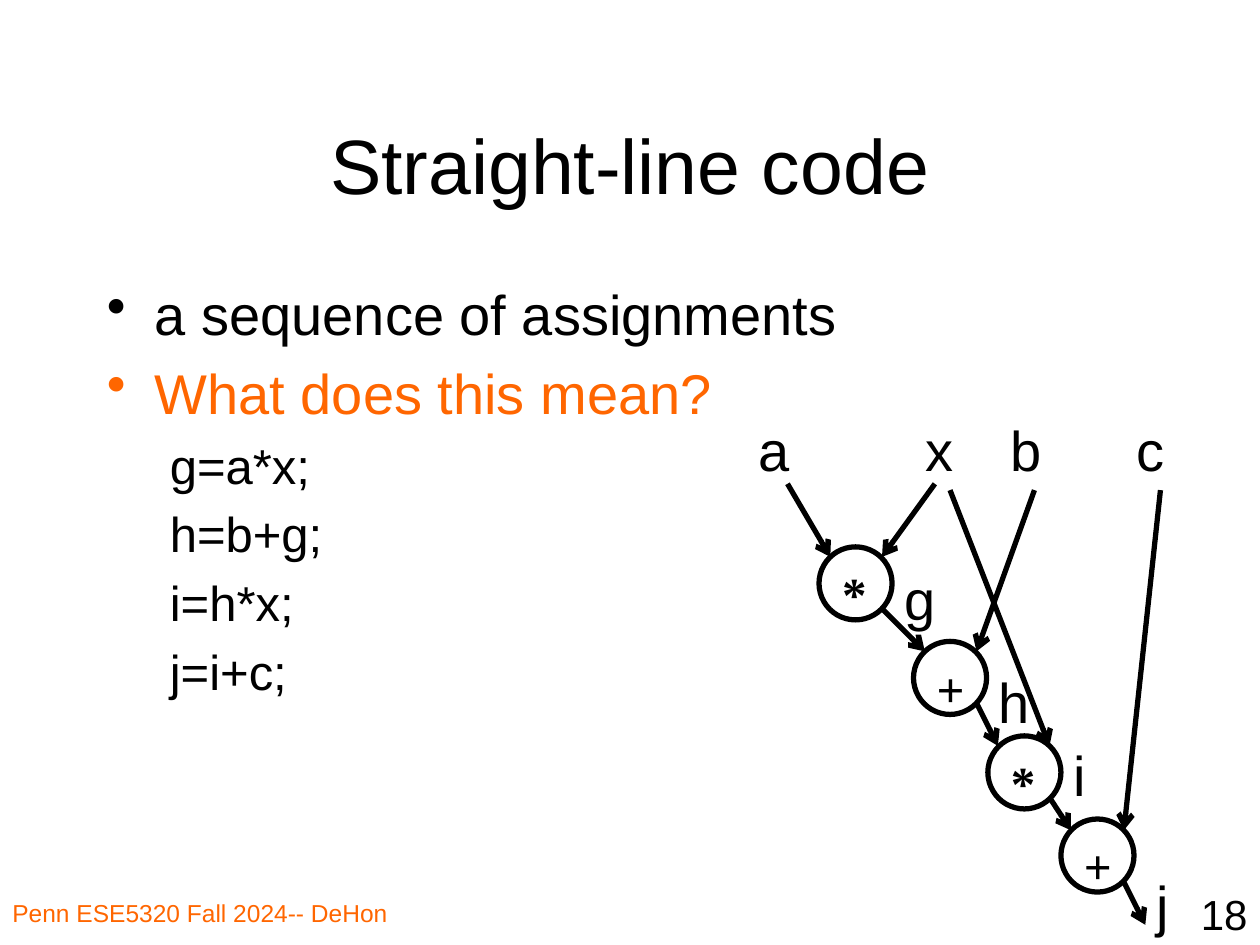
from lxml import etree
from pptx import Presentation
from pptx.dml.color import RGBColor
from pptx.enum import shapes, text
from pptx.oxml import ns
from pptx.util import Inches, Pt

BLACK = RGBColor(0x00, 0x00, 0x00)
ORANGE = RGBColor(0xFF, 0x66, 0x00)
NODE_SIZE = 0.58
LABEL_SIZE = (0.58, 0.64)


def add_run(paragraph, words, size, color=BLACK, font="Arial", bold=False):
    run = paragraph.add_run()
    run.text = words
    run.font.size = Pt(size)
    run.font.name = font
    run.font.bold = bold
    run.font.color.rgb = color


def add_text(slide, box, words, size, color=BLACK, align=text.PP_ALIGN.LEFT,
             anchor=text.MSO_ANCHOR.TOP):
    frame = slide.shapes.add_textbox(*map(Inches, box)).text_frame
    frame.word_wrap = True
    frame.vertical_anchor = anchor
    frame.paragraphs[0].alignment = align
    add_run(frame.paragraphs[0], words, size, color)


def format_item(paragraph, margin, indent, bullet=None):
    """Set the indents, the proportional space before and the bullet."""
    props = paragraph._p.get_or_add_pPr()
    props.set("marL", str(Inches(margin)))
    props.set("indent", str(Inches(indent)))
    before = etree.SubElement(props, ns.qn("a:spcBef"))
    etree.SubElement(before, ns.qn("a:spcPct")).set("val", "20000")
    if bullet:
        etree.SubElement(props, ns.qn("a:buChar")).set("char", bullet)
    else:
        etree.SubElement(props, ns.qn("a:buNone"))


def add_body(slide, box):
    frame = slide.shapes.add_textbox(*map(Inches, box)).text_frame
    frame.word_wrap = True
    points = [("a sequence of assignments", BLACK), ("What does this mean?", ORANGE)]
    code = ["g=a*x;", "h=b+g;", "i=h*x;", "j=i+c;"]
    for index, (words, color) in enumerate(points):
        item = frame.add_paragraph() if index else frame.paragraphs[0]
        format_item(item, 0.38, -0.38, "•")
        add_run(item, words, 32, color)
    for statement in code:
        item = frame.add_paragraph()
        item.level = 1
        format_item(item, 0.81, -0.31)
        add_run(item, statement, 28)


def add_arrow(slide, start, end):
    arrow = slide.shapes.add_connector(
        shapes.MSO_CONNECTOR.STRAIGHT, *map(Inches, (*start, *end)))
    arrow.line.color.rgb = BLACK
    arrow.line.width = Pt(3)
    etree.SubElement(arrow.line._get_or_add_ln(), ns.qn("a:tailEnd")).set("type", "arrow")
    etree.SubElement(arrow._element.spPr, ns.qn("a:effectLst"))


def add_operator(slide, left, top, symbol):
    node = slide.shapes.add_shape(
        shapes.MSO_SHAPE.OVAL, *map(Inches, (left, top, NODE_SIZE, NODE_SIZE)))
    node.shadow.inherit = False
    node.fill.background()
    node.line.color.rgb = BLACK
    node.line.width = Pt(3)
    frame = node.text_frame
    frame.vertical_anchor = text.MSO_ANCHOR.TOP
    frame.paragraphs[0].alignment = text.PP_ALIGN.LEFT
    add_run(frame.paragraphs[0], symbol, 28, font="Times New Roman", bold=True)


def add_dataflow(slide, box):
    """Draw the graph of operators; all offsets are from the box corner."""
    x0, y0 = box[:2]
    operators = [(0.58, 1.09, "*"), (1.33, 1.84, "+"),
                 (1.92, 2.59, "*"), (2.5, 3.25, "+")]
    labels = [(0, 0, "a"), (1.33, 0, "x"), (2, 0, "b"), (3, 0, "c"),
              (1.16, 1.18, "g"), (1.91, 2, "h"), (2.5, 2.58, "i"), (3.16, 3.61, "j")]
    arrows = [
        # Inputs a, x, x, b, c
        ((0.33, 0.59), (0.67, 1.17)), ((1.5, 0.59), (1.08, 1.17)),
        ((1.62, 0.64), (2.41, 2.67)), ((2.29, 0.64), (1.83, 1.92)),
        ((3.29, 0.64), (3, 3.34)),
        # Results g, h, i, j
        ((1.08, 1.58), (1.42, 1.92)), ((1.83, 2.33), (2, 2.67)),
        ((2.41, 3.08), (2.58, 3.34)), ((3, 3.75), (3.17, 4.09)),
    ]
    for (xa, ya), (xb, yb) in arrows:
        add_arrow(slide, (x0 + xa, y0 + ya), (x0 + xb, y0 + yb))
    for dx, dy, symbol in operators:
        add_operator(slide, x0 + dx, y0 + dy, symbol)
    for dx, dy, name in labels:
        add_text(slide, (x0 + dx, y0 + dy, *LABEL_SIZE), name, 32)


def main():
    deck = Presentation()
    deck.slide_width, deck.slide_height = Inches(10), Inches(7.5)
    slide = deck.slides.add_slide(deck.slide_layouts[6])

    # Footer and slide number
    add_text(slide, (0, 7.08, 3.83, 0.42), "Penn ESE5320 Fall 2024-- DeHon", 14, ORANGE)
    add_text(slide, (7.92, 7, 2.08, 0.5), "18", 24, align=text.PP_ALIGN.RIGHT)

    # Title, body and graph
    add_text(slide, (0.75, 0.67, 8.5, 1.25), "Straight-line code", 44,
             align=text.PP_ALIGN.CENTER, anchor=text.MSO_ANCHOR.MIDDLE)
    add_body(slide, (0.75, 2.17, 6.17, 4.5))
    add_dataflow(slide, (5.92, 3.25, 3.74, 4.25))
    deck.save("out.pptx")


if __name__ == "__main__":
    main()
